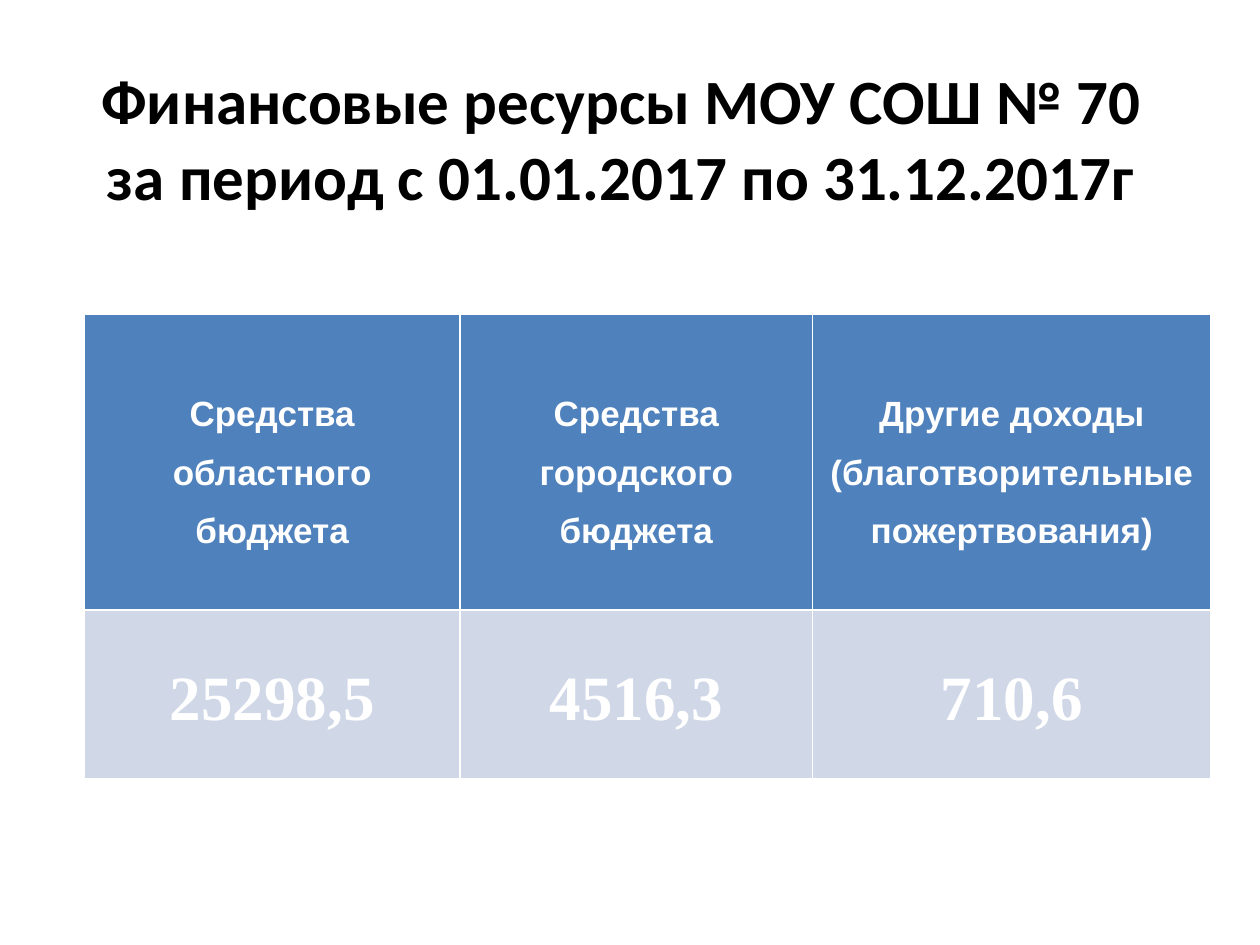
from pptx import Presentation
from pptx.dml.color import RGBColor
from pptx.enum.text import MSO_ANCHOR, PP_ALIGN
from pptx.util import Inches, Pt

CENTER = PP_ALIGN.CENTER
TOP = MSO_ANCHOR.TOP
MIDDLE = MSO_ANCHOR.MIDDLE


def color(code):
    return RGBColor.from_string(code)


class Deck:
    """Holds the style and the current slide."""

    dark, white = "000000", "FFFFFF"
    blue, pale = "4F81BD", "D0D8E8"

    def __init__(self, slide):
        self.slide = slide

    def style(self, frame, face, size, ink, space=1.0):
        for para in frame.paragraphs:
            para.alignment = CENTER
            para.line_spacing = space
            for run in para.runs:
                run.font.name = face
                run.font.size = Pt(size)
                run.font.bold = True
                run.font.color.rgb = color(ink)

    def title(self, text, left, top, width, height):
        box = self.slide.shapes.add_textbox(
            Inches(left), Inches(top), Inches(width), Inches(height))
        frame = box.text_frame
        frame.word_wrap = True
        frame.vertical_anchor = MIDDLE
        frame.text = text
        self.style(frame, "Calibri", 36, self.dark)

    def cell(self, cell, text, fill, anchor, pads, face, size, space):
        cell.fill.solid()
        cell.fill.fore_color.rgb = color(fill)
        cell.vertical_anchor = anchor
        side, top, bottom = pads
        cell.margin_left = cell.margin_right = Inches(side)
        cell.margin_top = Inches(top)
        cell.margin_bottom = Inches(bottom)
        cell.text_frame.text = text
        self.style(cell.text_frame, face, size, self.white, space)

    def table(self, heads, sums, left, top, widths, heights):
        table = self.slide.shapes.add_table(
            len(heights), len(widths), Inches(left), Inches(top),
            Inches(sum(widths)), Inches(sum(heights))).table
        table.first_row = table.horz_banding = False
        for col, width in zip(table.columns, widths):
            col.width = Inches(width)
        for row, height in zip(table.rows, heights):
            row.height = Inches(height)
        for i, (head, total) in enumerate(zip(heads, sums)):
            self.cell(table.cell(0, i), head, self.blue, TOP,
                      (0.08, 0.49, 0), "Arial", 20, 1.5)
            self.cell(table.cell(1, i), total, self.pale, MIDDLE,
                      (0.07, 0.07, 0.07), "Times New Roman", 36, 1.15)


def main():
    prs = Presentation()
    prs.slide_width, prs.slide_height = Inches(10), Inches(7.5)
    deck = Deck(prs.slides.add_slide(prs.slide_layouts[6]))
    deck.title("Финансовые ресурсы МОУ СОШ № 70 "
               "за период с 01.01.2017 по 31.12.2017г", 0.43, 0.44, 9, 1.3)
    heads = ["Средства областного бюджета", "Средства городского бюджета",
             "Другие доходы (благотворительные пожертвования)"]
    sums = ["25298,5", "4516,3", "710,6"]
    deck.table(heads, sums, 0.67, 2.49, [2.98, 2.8, 3.16], [2.35, 1.34])
    prs.save("out.pptx")


if __name__ == "__main__":
    main()
